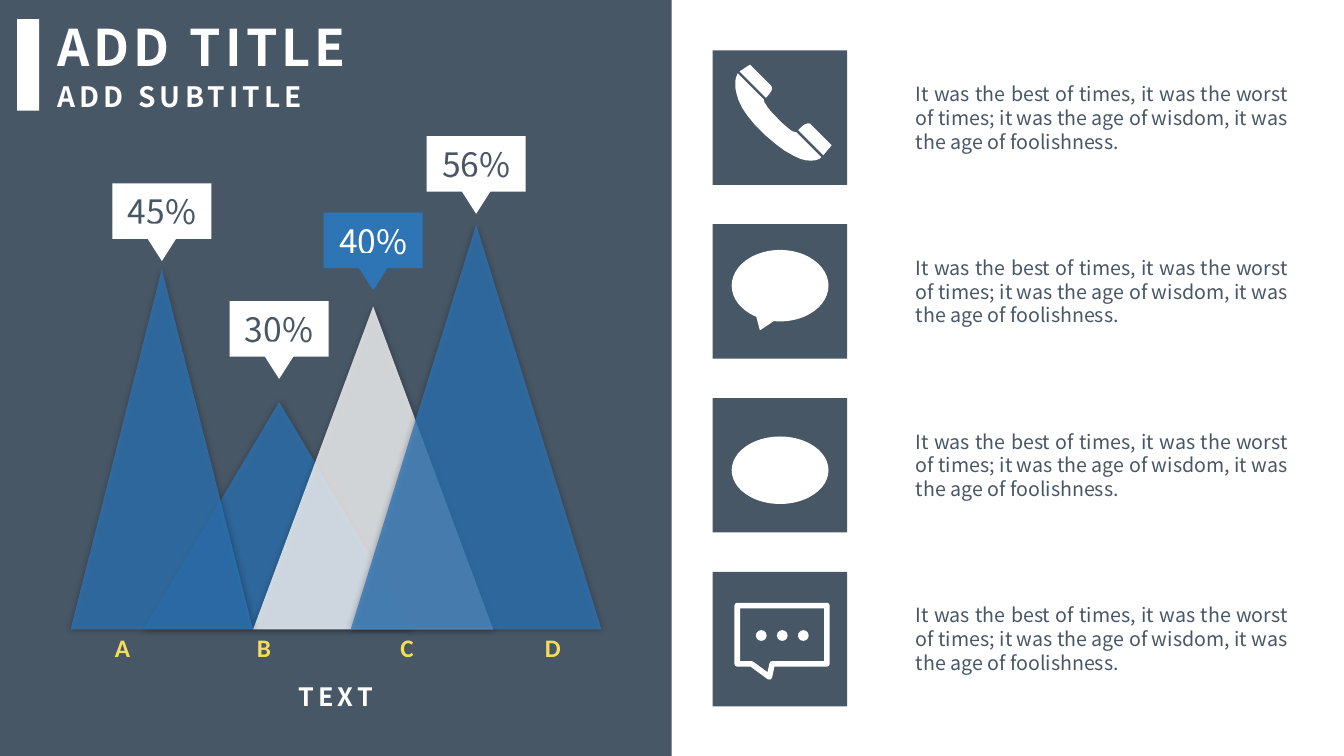
from lxml.etree import SubElement
from pptx import Presentation
from pptx.dml.color import RGBColor
from pptx.enum.shapes import MSO_SHAPE
from pptx.enum.text import MSO_ANCHOR, MSO_AUTO_SIZE, PP_ALIGN
from pptx.oxml.ns import qn
from pptx.util import Cm, Pt

SLATE = RGBColor(0x48, 0x57, 0x66)
BLUE = RGBColor(0x2E, 0x75, 0xB6)
WHITE = RGBColor(0xFF, 0xFF, 0xFF)
YELLOW = RGBColor(0xF3, 0xDE, 0x5A)
NOTO = "Noto Sans CJK SC"
QUOTE = ("It was the best of times, it was the worst of times; "
         "it was the age of wisdom, it was the age of foolishness.")


def add_block(shapes, kind, left, top, width, height, color):
    sp = shapes.add_shape(kind, Cm(left), Cm(top), Cm(width), Cm(height))
    sp.shadow.inherit = False
    sp.fill.solid()
    sp.fill.fore_color.rgb = color
    sp.line.fill.background()
    return sp


def write(sp, text, size, color, align, font=NOTO, bold=False, spacing=0):
    tf = sp.text_frame
    tf.text = text
    tf.word_wrap = True
    p = tf.paragraphs[0]
    p.alignment = align
    p.line_spacing = Pt(round(size * 1.22))
    r = p.runs[0]
    r.font.name = font
    r.font.size = Pt(size)
    r.font.bold = bold
    r.font.color.rgb = color
    if spacing:
        r.font._element.set("spc", str(spacing * 100))


prs = Presentation()
prs.slide_width = Cm(33.87)
prs.slide_height = Cm(19.05)
s = prs.slides.add_slide(prs.slide_layouts[5])
add_block(s.shapes, MSO_SHAPE.RECTANGLE, 0, 0, 16.93, 19.05, SLATE)

base = 15.86
peaks = [
    ("30%", 3.63, 10.13, 6.81, 7.59, BLUE, 76, WHITE, SLATE),
    ("40%", 6.38, 7.72, 6.05, 5.36, WHITE, 78, BLUE, WHITE),
    ("56%", 8.84, 5.66, 6.32, 3.43, BLUE, 76, WHITE, SLATE),
    ("45%", 1.78, 6.78, 4.6, 4.62, BLUE, 76, WHITE, SLATE),
]
for label, left, top, width, tag_top, color, alpha, tag_color, ink in peaks:
    sp = add_block(s.shapes, MSO_SHAPE.ISOSCELES_TRIANGLE,
                   left, top, width, base - top, color)
    clr = sp.fill._xPr.find(qn("a:solidFill"))[0]
    SubElement(clr, qn("a:alpha"), val=str(alpha * 1000))
    effects = sp._element.spPr.find(qn("a:effectLst"))
    shadow = SubElement(effects, qn("a:outerShdw"), blurRad=str(Pt(5)),
                        dist="0", dir="0", algn="ctr", rotWithShape="0")
    clr = SubElement(shadow, qn("a:srgbClr"), val="000000")
    SubElement(clr, qn("a:alpha"), val="40000")

for label, left, top, width, tag_top, color, alpha, tag_color, ink in peaks:
    center = left + width / 2
    tag = s.shapes.add_group_shape()
    sp = add_block(tag.shapes, MSO_SHAPE.RECTANGLE,
                   center - 1.25, tag_top, 2.5, 1.4, tag_color)
    sp.text_frame.margin_left = sp.text_frame.margin_right = Cm(0.1)
    sp.text_frame.vertical_anchor = MSO_ANCHOR.MIDDLE
    write(sp, label, 24, ink, PP_ALIGN.CENTER)
    sp = add_block(tag.shapes, MSO_SHAPE.ISOSCELES_TRIANGLE,
                   center - 0.6, tag_top + 1.02, 1.2, 0.94, tag_color)
    sp._element.spPr.find(qn("a:xfrm")).set("flipV", "1")

captions = [("TEXT", 8.46, 17.02, 4.22, WHITE, NOTO, 3)]
for letter, center in zip("ABCD", (3.09, 6.65, 10.26, 13.93)):
    captions.append((letter, center, 15.8, 1.2, YELLOW, "Calibri", 0))
for text, center, top, width, color, font, spacing in captions:
    sp = s.shapes.add_textbox(Cm(center - width / 2), Cm(top), Cm(width), Cm(1.02))
    write(sp, text, 18, color, PP_ALIGN.CENTER, font, True, spacing)
    sp.text_frame.auto_size = MSO_AUTO_SIZE.SHAPE_TO_FIT_TEXT

row_gap = 4.38
for i in range(4):
    add_block(s.shapes, MSO_SHAPE.RECTANGLE, 17.96, 1.27 + i * row_gap, 3.39, 3.39, SLATE)
    sp = s.shapes.add_textbox(Cm(22.83), Cm(1.93 + i * row_gap), Cm(9.88), Cm(2.06))
    write(sp, QUOTE, 14, SLATE, PP_ALIGN.JUSTIFY)
    sp.text_frame.auto_size = MSO_AUTO_SIZE.SHAPE_TO_FIT_TEXT

mouthpiece = [(2075, 391), [(2012, 328)],
              [(2019, 320), (2032, 307), (2042, 312)], [(2096, 366)]]
earpiece = [(1930, 246), [(1864, 180)], [(1890, 163)], [(1943, 216)],
            [(1951, 226), (1938, 239), (1930, 246)]]
handle = [(1925, 251), [(1925, 254), (1925, 264), (1963, 302)],
          [(1991, 330), (2004, 335), (2007, 333)], [(2070, 396)],
          [(2062, 404), (2022, 427), (1928, 340)],
          [(1834, 254), (1852, 198), (1859, 185)]]
for start, *segments in (mouthpiece, earpiece, handle):
    points = [start]
    for segment in segments:
        if len(segment) == 1:
            points += segment
            continue
        a, (b, c, d) = points[-1], segment
        for t in (k / 10 for k in range(1, 11)):
            u = 1 - t
            points.append(tuple(
                u**3 * a[n] + 3 * u * u * t * b[n] + 3 * u * t * t * c[n] + t**3 * d[n]
                for n in (0, 1)))
    builder = s.shapes.build_freeform(*start, scale=Cm(0.01))
    builder.add_line_segments(points[1:], close=True)
    sp = builder.convert_to_shape()
    sp.shadow.inherit = False
    sp.fill.solid()
    sp.fill.fore_color.rgb = WHITE
    sp.line.fill.background()

add_block(s.shapes, MSO_SHAPE.OVAL_CALLOUT, 18.44, 6.3, 2.44, 1.8, WHITE)
add_block(s.shapes, MSO_SHAPE.OVAL, 18.44, 11.0, 2.44, 1.7, WHITE)

builder = s.shapes.build_freeform(1858, 1526, scale=Cm(0.01))
builder.add_line_segments([(2084, 1526), (2084, 1673), (1946, 1673),
                           (1939, 1706), (1894, 1673), (1858, 1673)], close=True)
bubble = builder.convert_to_shape()
bubble.shadow.inherit = False
bubble.fill.background()
bubble.line.color.rgb = WHITE
bubble.line.width = Pt(4)
for i in range(3):
    add_block(s.shapes, MSO_SHAPE.OVAL, 19.05 + i * 0.53, 15.88, 0.27, 0.27, WHITE)

title = s.shapes.title
title.left, title.top, title.width, title.height = Cm(1.19), Cm(0.25), Cm(8.81), Cm(1.8)
write(title, "ADD TITLE", 36, WHITE, PP_ALIGN.LEFT, bold=True, spacing=3)
title.text_frame.vertical_anchor = MSO_ANCHOR.TOP
title.text_frame.auto_size = MSO_AUTO_SIZE.SHAPE_TO_FIT_TEXT
subtitle = s.shapes.add_textbox(Cm(1.19), Cm(1.88), Cm(7.29), Cm(1.12))
write(subtitle, "ADD SUBTITLE", 20, WHITE, PP_ALIGN.LEFT, bold=True, spacing=3)
subtitle.text_frame.auto_size = MSO_AUTO_SIZE.SHAPE_TO_FIT_TEXT
subtitle._element.addprevious(title._element)
add_block(s.shapes, MSO_SHAPE.RECTANGLE, 0.43, 0.48, 0.56, 2.31, WHITE)

prs.save("out.pptx")
